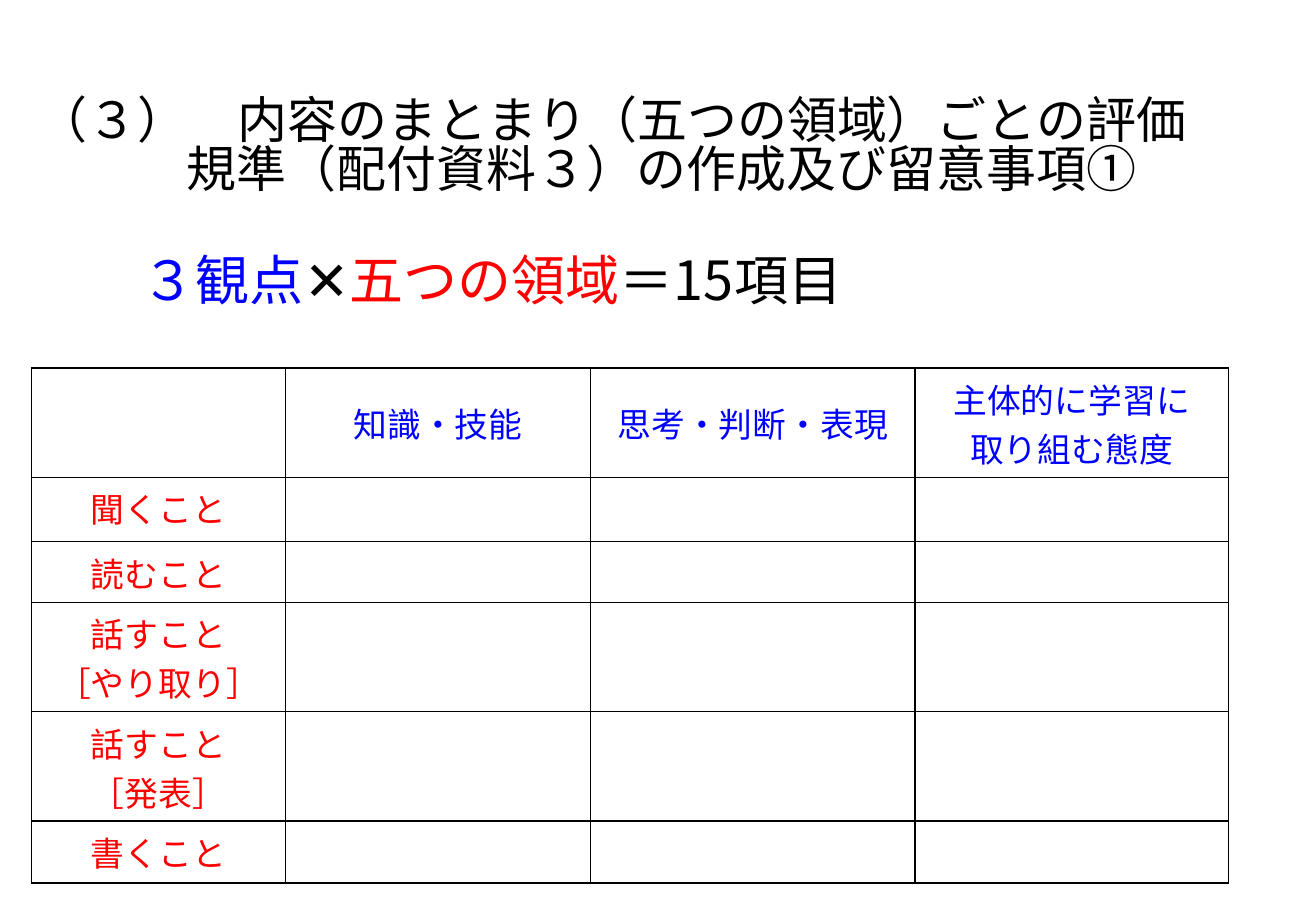
from lxml import etree
from pptx import Presentation
from pptx.dml.color import RGBColor
from pptx.enum.text import MSO_ANCHOR, PP_ALIGN
from pptx.oxml.ns import qn
from pptx.util import Inches, Pt

CENTER = PP_ALIGN.CENTER
TOP = MSO_ANCHOR.TOP
MIDDLE = MSO_ANCHOR.MIDDLE
FONT = "Noto Sans CJK JP"
BLACK, BLUE, RED = "000000", "0000FF", "FF0000"

TITLE_LINES = [  # text, left indent in inches
    ("（３）　内容のまとまり（五つの領域）ごとの評価", 0.41),
    ("規準（配付資料３）の作成及び留意事項①", 1.64),
]
FORMULA = [("３観点", BLUE), ("✕", BLACK), ("五つの領域", RED), ("＝15項目", BLACK)]
VIEWPOINTS = ["知識・技能", "思考・判断・表現", "主体的に学習に\n取り組む態度"]
DOMAINS = ["聞くこと", "読むこと", "話すこと\n［やり取り］", "話すこと\n［発表］", "書くこと"]
COLUMN_WIDTHS = [2.09, 2.51, 2.67, 2.58]
ROW_HEIGHTS = [0.9, 0.53, 0.5, 0.9, 0.9, 0.51]


def color(value):
    return RGBColor.from_string(value)


def style_paragraph(para, size, text_color=BLACK):
    para.font.size = Pt(size)
    para.font.name = FONT
    para.font.color.rgb = color(text_color)
    # East Asian typeface
    properties = para.font._element
    etree.SubElement(properties, qn("a:ea")).set("typeface", FONT)


def indent_paragraph(para, inches):
    properties = para._p.get_or_add_pPr()
    properties.set("marL", str(Inches(inches)))
    properties.set("indent", "0")


def add_text_frame(slide, left, top, width, height, anchor):
    box = slide.shapes.add_textbox(Inches(left), Inches(top), Inches(width), Inches(height))
    frame = box.text_frame
    frame.word_wrap = True
    frame.vertical_anchor = anchor
    return frame


def add_title(slide, left, top, width, height):
    frame = add_text_frame(slide, left, top, width, height, MIDDLE)
    frame.margin_bottom = Inches(0.1)
    frame.text = "\n".join(text for text, indent in TITLE_LINES)
    for para, (text, indent) in zip(frame.paragraphs, TITLE_LINES):
        style_paragraph(para, 29.6)
        para.line_spacing = 0.83
        indent_paragraph(para, indent)


def add_formula(slide, left, top, width, height):
    frame = add_text_frame(slide, left, top, width, height, TOP)
    para = frame.paragraphs[0]
    style_paragraph(para, 32)
    para.line_spacing = 0.9
    indent_paragraph(para, 1.33)
    for text, text_color in FORMULA:
        span = para.add_run()
        span.text = text
        span.font.color.rgb = color(text_color)


def outline_cell(cell):
    properties = cell._tc.get_or_add_tcPr()
    for position, side in enumerate(("a:lnL", "a:lnR", "a:lnT", "a:lnB")):
        line = etree.Element(qn(side), w=str(Pt(1)))
        fill = etree.SubElement(line, qn("a:solidFill"))
        etree.SubElement(fill, qn("a:srgbClr"), val=BLACK)
        properties.insert(position, line)


def fill_cell(cell, text, text_color, anchor):
    cell.text = text
    cell.vertical_anchor = anchor
    for para in cell.text_frame.paragraphs:
        para.alignment = CENTER
        style_paragraph(para, 20, text_color)


def add_criteria_table(slide, left, top):
    frame = slide.shapes.add_table(
        len(ROW_HEIGHTS), len(COLUMN_WIDTHS), Inches(left), Inches(top),
        Inches(sum(COLUMN_WIDTHS)), Inches(sum(ROW_HEIGHTS)))
    table = frame.table
    table.first_row = False
    table.horz_banding = False
    for column, width in zip(table.columns, COLUMN_WIDTHS):
        column.width = Inches(width)
    for row, height in zip(table.rows, ROW_HEIGHTS):
        row.height = Inches(height)
    for cell in table.iter_cells():
        cell.fill.background()
        outline_cell(cell)
    # Viewpoints across, domains down
    for index, text in enumerate(VIEWPOINTS, 1):
        fill_cell(table.cell(0, index), text, BLUE, MIDDLE)
    for index, text in enumerate(DOMAINS, 1):
        fill_cell(table.cell(index, 0), text, RED, TOP)


def main():
    deck = Presentation()
    deck.slide_width = Inches(10.83)
    deck.slide_height = Inches(7.5)
    page = deck.slides.add_slide(deck.slide_layouts[6])
    add_title(page, -0.2, 0.64, 10.7, 1.21)
    add_criteria_table(page, 0.26, 3.03)
    add_formula(page, -0.26, 2.04, 10.83, 1.71)
    deck.save("out.pptx")


if __name__ == "__main__":
    main()
